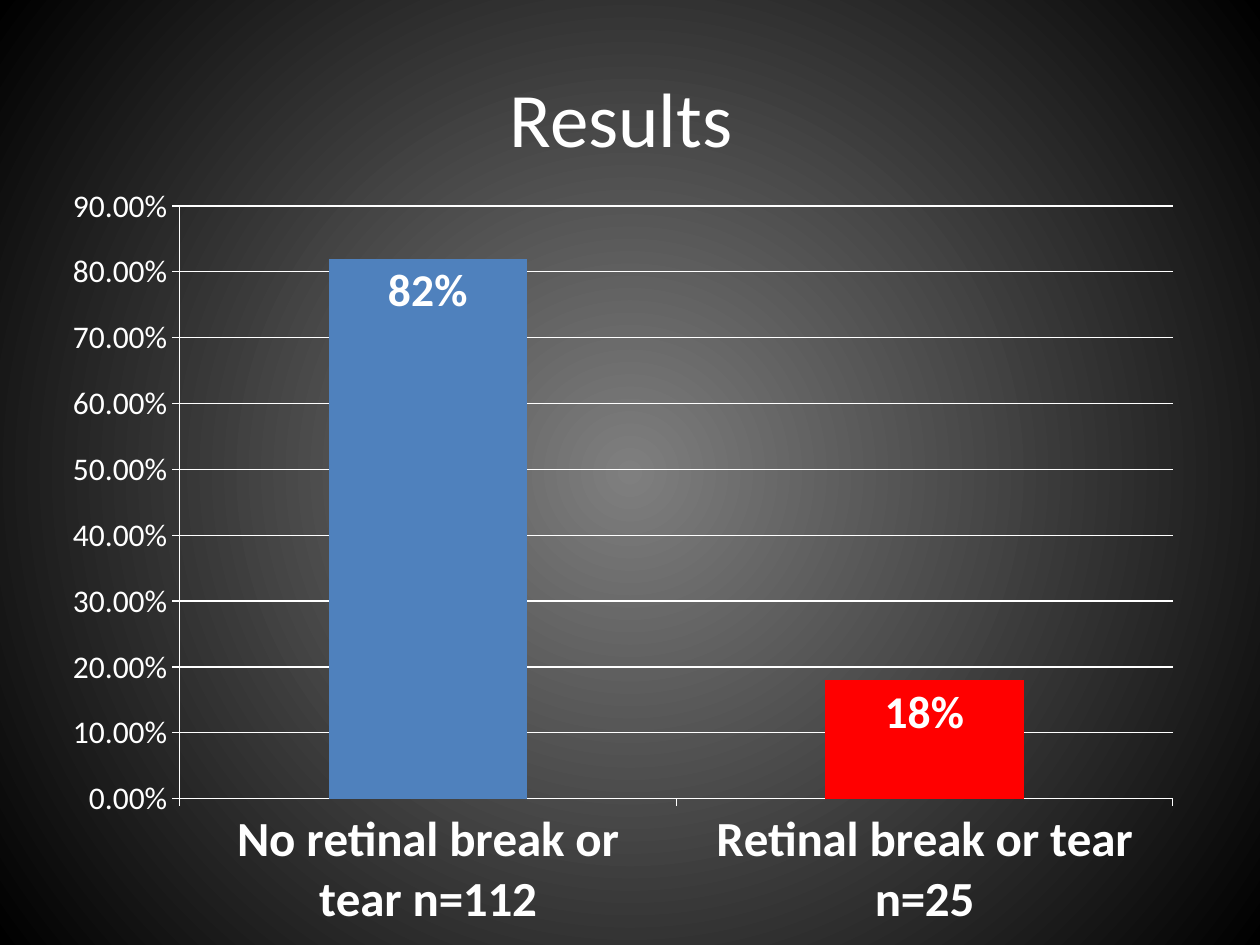
"""Build the results slide with a two-bar column chart."""
from dataclasses import dataclass

from lxml.etree import SubElement
from pptx import Presentation
from pptx.chart.axis import _BaseAxis
from pptx.chart.chart import Chart
from pptx.chart.data import CategoryChartData
from pptx.dml.color import RGBColor
from pptx.enum.chart import XL_CHART_TYPE, XL_LABEL_POSITION, XL_TICK_MARK
from pptx.enum.text import MSO_ANCHOR, PP_ALIGN
from pptx.oxml.ns import qn
from pptx.slide import Slide
from pptx.text.text import Font
from pptx.util import Inches, Pt


@dataclass(frozen=True)
class Theme:
    face: str = "Calibri"
    ink: str = "FFFFFF"
    glow: str = "7F7F7F"
    edge: str = "000000"
    blue: str = "4F81BD"
    red: str = "FF0000"
    title: int = 44
    group: int = 28
    label: int = 26
    scale: int = 18


@dataclass(frozen=True)
class Bar:
    name: str
    share: float
    color: str


THEME = Theme()
BARS = (
    Bar("No retinal break or tear n=112", 0.82, THEME.blue),
    Bar("Retinal break or tear n=25", 0.18, THEME.red),
)
PLOT = {"x": 0.11, "y": 0.04, "w": 0.87, "h": 0.77}


def style(font: Font, size: int, bold: bool = False) -> None:
    font.name, font.size, font.bold = THEME.face, Pt(size), bold
    font.color.rgb = RGBColor.from_string(THEME.ink)


def write(slide: Slide, text: str, *, box: tuple, size: int,
          bold: bool = False, align: PP_ALIGN = PP_ALIGN.CENTER) -> None:
    frame = slide.shapes.add_textbox(*map(Inches, box)).text_frame
    frame.word_wrap, frame.vertical_anchor = True, MSO_ANCHOR.MIDDLE
    line = frame.paragraphs[0]
    line.alignment = align
    run = line.add_run()
    run.text = text
    style(run.font, size, bold)


def shade(slide: Slide) -> None:
    fill = slide.background.fill
    fill.gradient()
    for stop, color in zip(fill.gradient_stops, (THEME.glow, THEME.edge)):
        stop.color.rgb = RGBColor.from_string(color)
    grad = slide.element.find(".//" + qn("a:gradFill"))
    grad.remove(grad.find(qn("a:lin")))
    ring = SubElement(grad, qn("a:path"), {"path": "circle"})
    SubElement(ring, qn("a:fillToRect"), dict.fromkeys("ltrb", "50000"))


def rule(axis: _BaseAxis, size: int, bold: bool = False) -> None:
    axis.major_tick_mark = XL_TICK_MARK.OUTSIDE
    axis.minor_tick_mark = XL_TICK_MARK.NONE
    axis.format.line.color.rgb = RGBColor.from_string(THEME.ink)
    style(axis.tick_labels.font, size, bold)


def place(chart: Chart) -> None:
    area = chart.element.find(".//" + qn("c:plotArea"))
    for old in area.findall(qn("c:layout")):
        area.remove(old)
    layout = SubElement(area, qn("c:layout"))
    area.insert(0, layout)
    manual = SubElement(layout, qn("c:manualLayout"))
    SubElement(manual, qn("c:layoutTarget"), val="inner")
    for key in "xy":
        SubElement(manual, qn(f"c:{key}Mode"), val="edge")
    for key, size in PLOT.items():
        SubElement(manual, qn(f"c:{key}"), val=str(size))


def draw(slide: Slide, bars: tuple[Bar, ...], box: tuple) -> None:
    data = CategoryChartData(number_format="0%")
    data.categories = [bar.name for bar in bars]
    data.add_series("Series 1", [bar.share for bar in bars])
    chart = slide.shapes.add_chart(
        XL_CHART_TYPE.COLUMN_CLUSTERED, *map(Inches, box), data).chart
    chart.has_legend = chart.has_title = False
    style(chart.font, THEME.scale)
    place(chart)

    rule(chart.category_axis, THEME.group, bold=True)
    axis = chart.value_axis
    rule(axis, THEME.scale)
    axis.minimum_scale, axis.maximum_scale, axis.major_unit = 0, 0.9, 0.1
    axis.tick_labels.number_format = "0.00%"
    axis.tick_labels.number_format_is_linked = False
    axis.has_major_gridlines = True
    axis.major_gridlines.format.line.color.rgb = RGBColor.from_string(THEME.ink)

    plot = chart.plots[0]
    plot.gap_width, plot.vary_by_categories = 150, False
    series = plot.series[0]
    series.format.fill.solid()
    series.format.fill.fore_color.rgb = RGBColor.from_string(THEME.blue)
    for spot, bar in enumerate(bars):
        fill = series.points[spot].format.fill
        fill.solid()
        fill.fore_color.rgb = RGBColor.from_string(bar.color)
    labels = series.data_labels
    labels.show_value = True
    labels.number_format, labels.number_format_is_linked = "0%", False
    labels.position = XL_LABEL_POSITION.INSIDE_END
    style(labels.font, THEME.label, bold=True)


def main() -> None:
    deck = Presentation()
    deck.slide_width, deck.slide_height = Inches(10), Inches(7.5)
    slide = deck.slides.add_slide(deck.slide_layouts[6])
    shade(slide)
    write(slide, "Results ", box=(0.5, 0.3, 9, 1.25), size=THEME.title)
    draw(slide, BARS, (0.43, 1.39, 9.06, 6.11))
    deck.save("out.pptx")


if __name__ == "__main__":
    main()
